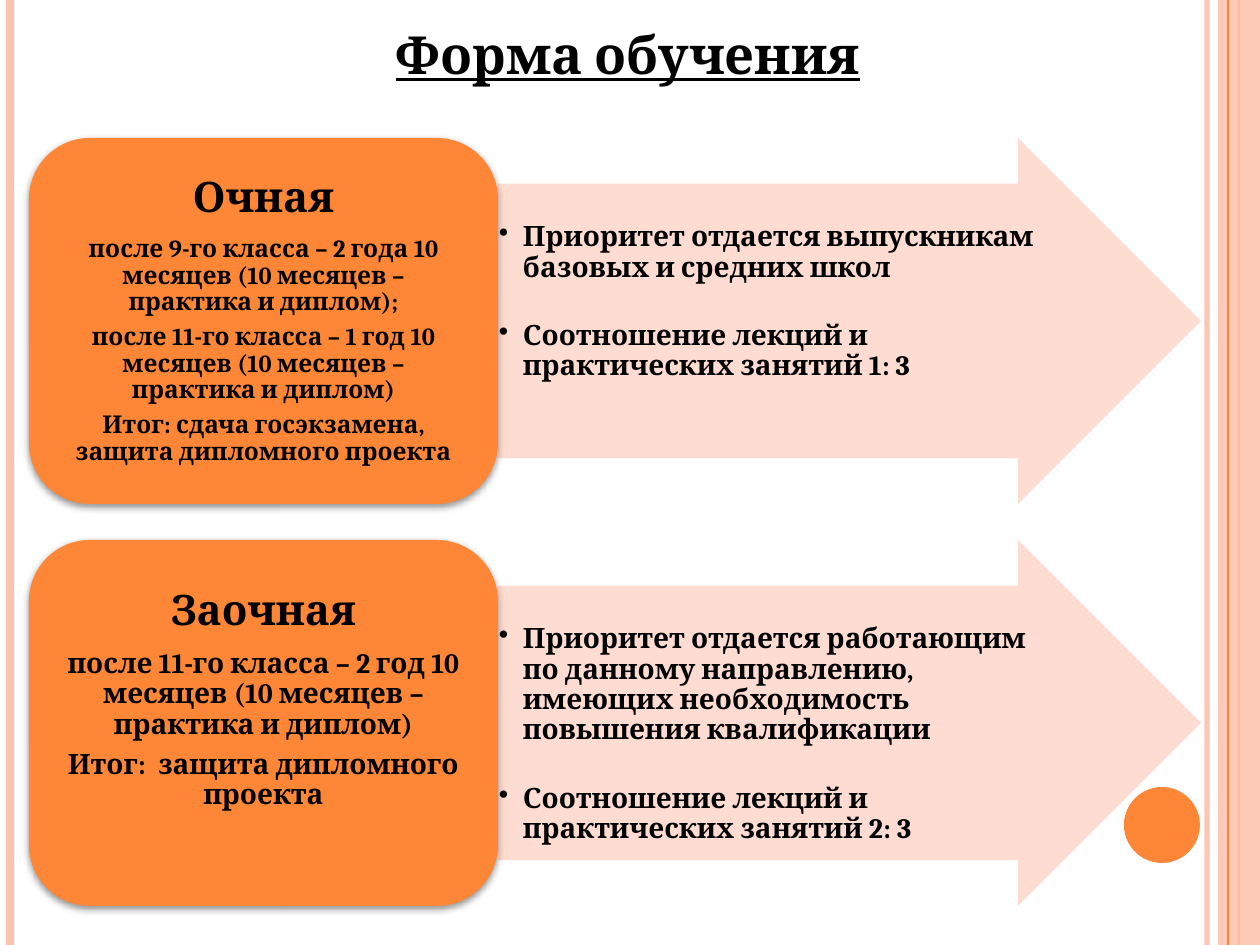
from dataclasses import dataclass

from lxml import etree
from pptx import Presentation
from pptx.dml.color import RGBColor
from pptx.enum.shapes import MSO_CONNECTOR, MSO_SHAPE
from pptx.enum.text import MSO_ANCHOR, PP_ALIGN
from pptx.oxml.ns import qn
from pptx.util import Emu, Pt

LINE = MSO_CONNECTOR.STRAIGHT
RECT, OVAL = MSO_SHAPE.RECTANGLE, MSO_SHAPE.OVAL
ROUND, ARROW = MSO_SHAPE.ROUNDED_RECTANGLE, MSO_SHAPE.RIGHT_ARROW
TOP, MIDDLE, BOTTOM = MSO_ANCHOR.TOP, MSO_ANCHOR.MIDDLE, MSO_ANCHOR.BOTTOM
LEFT, CENTER = PP_ALIGN.LEFT, PP_ALIGN.CENTER

FONT = "Cambria"
COLORS = {"orange": "FE8637", "peach": "FEC3AE", "pale": "FFD9CE", "black": "000000"}
WIDE, HIGH = 1260, 945
CARD_X, CARD_W = 29, 469
ARROW_X, ARROW_W = CARD_X + CARD_W, 703
ROW_Y, ROW_H, STEP = 138, 366, 402
INDENT = 24


@dataclass
class Stripe:
    x: int
    width: float
    color: str
    alpha: int = 100


@dataclass
class Form:
    name: str
    size: int
    terms: list[str]
    points: list[str]
    lift: int = 0


UNDER = [Stripe(1207, 3, "peach", 93), Stripe(10, 4.5, "peach"), Stripe(1239, 1.5, "orange")]
OVER = Stripe(1228, 0.75, "orange")
FORMS = [
    Form(
        "Очная", 14,
        ["после 9-го класса – 2 года 10 месяцев (10 месяцев – практика и диплом);",
         "после 11-го класса – 1 год 10 месяцев (10 месяцев – практика и диплом)",
         "Итог: сдача госэкзамена, защита дипломного проекта"],
        ["Приоритет отдается выпускникам базовых и средних школ",
         "Соотношение лекций и практических занятий 1: 3"],
    ),
    Form(
        "Заочная", 16,
        ["после 11-го класса – 2 год 10 месяцев (10 месяцев – практика и диплом)",
         "Итог:  защита дипломного проекта"],
        ["Приоритет отдается работающим по данному направлению, "
         "имеющих необходимость повышения квалификации",
         "Соотношение лекций и практических занятий 2: 3"],
        lift=46,
    ),
]


def px(n: int) -> Emu:
    return Emu(round(n * 914400 / 126))


def rgb(name: str) -> RGBColor:
    return RGBColor.from_string(COLORS[name])


def fade(shape, alpha: int) -> None:
    """Set the opacity, in percent, of the shape's first colour."""
    color = shape.element.spPr.find(".//" + qn("a:srgbClr"))
    etree.SubElement(color, qn("a:alpha"), val=str(alpha * 1000))


def draw_line(slide, stripe: Stripe) -> None:
    line = slide.shapes.add_connector(LINE, px(stripe.x), 0, px(stripe.x), px(HIGH))
    line.line.color.rgb = rgb(stripe.color)
    line.line.width = Pt(stripe.width)
    etree.SubElement(line.element.spPr, qn("a:effectLst"))
    if stripe.alpha < 100:
        fade(line, stripe.alpha)


def draw_shape(slide, kind, box: tuple[int, int, int, int], color: str, alpha: int = 100):
    shape = slide.shapes.add_shape(kind, *map(px, box))
    shape.fill.solid()
    shape.fill.fore_color.rgb = rgb(color)
    shape.line.fill.background()
    shape.shadow.inherit = False
    if alpha < 100:
        fade(shape, alpha)
    return shape


def add_shadow(shape) -> None:
    effects = shape.element.spPr.find(qn("a:effectLst"))
    outer = etree.SubElement(effects, qn("a:outerShdw"), blurRad="50800", dist="20000",
                             dir="5400000", rotWithShape="0")
    color = etree.SubElement(outer, qn("a:srgbClr"), val=COLORS["black"])
    etree.SubElement(color, qn("a:alpha"), val="42000")


def set_frame(shape, anchor, left: int, top: int, right: int, bottom: int):
    frame = shape.text_frame
    frame.word_wrap = True
    frame.vertical_anchor = anchor
    frame.margin_left, frame.margin_top = px(left), px(top)
    frame.margin_right, frame.margin_bottom = px(right), px(bottom)
    return frame


def style(para, size: int, align, after: float = 0) -> None:
    para.alignment = align
    para.line_spacing = 0.9
    para.space_before = Pt(0)
    para.space_after = Pt(round(after, 1))
    for run in para.runs:
        font = run.font
        font.name, font.size, font.bold = FONT, Pt(size), True
        font.color.rgb = rgb("black")


def add_bullet(para) -> None:
    props = para._p.get_or_add_pPr()
    props.set("marL", str(px(INDENT)))
    props.set("indent", str(-px(INDENT)))
    etree.SubElement(props, qn("a:buFontTx"))
    etree.SubElement(props, qn("a:buChar"), char="•")


def draw_arrow(slide, form: Form, y: int) -> None:
    arrow = draw_shape(slide, ARROW, (ARROW_X, y, ARROW_W, ROW_H), "pale", 90)
    arrow.adjustments[0], arrow.adjustments[1] = 0.75, 0.5
    frame = set_frame(arrow, TOP, 1, 39, 1, 1)
    frame.text = "\n".join(form.points)
    for para in frame.paragraphs:
        style(para, 16, LEFT, 22)
        add_bullet(para)


def draw_card(slide, form: Form, y: int) -> None:
    card = draw_shape(slide, ROUND, (CARD_X, y, CARD_W, ROW_H), "orange")
    add_shadow(card)
    frame = set_frame(card, MIDDLE, 13, 6, 13, 6 + form.lift)
    frame.text = "\n".join([form.name, *form.terms])
    for i, para in enumerate(frame.paragraphs):
        size = form.size if i else 24
        style(para, size, CENTER, 0.35 * size)


def set_title(slide, text: str) -> None:
    title = slide.shapes.title
    title.left, title.top, title.width, title.height = map(px, (59, 0, 1138, 91))
    frame = set_frame(title, BOTTOM, 13, 6, 13, 6)
    frame.text = text
    para = frame.paragraphs[0]
    style(para, 30, CENTER)
    para.line_spacing = 1.0
    para.runs[0].font.underline = True


def main() -> None:
    deck = Presentation()
    deck.slide_width, deck.slide_height = px(WIDE), px(HIGH)
    slide = deck.slides.add_slide(deck.slide_layouts[5])
    for stripe in UNDER:
        draw_line(slide, stripe)
    draw_shape(slide, RECT, (1218, 0, WIDE - 1218, HIGH), "peach", 87)
    draw_line(slide, OVER)
    draw_shape(slide, OVAL, (1124, 787, 76, 76), "orange")
    set_title(slide, "Форма обучения")
    for i, form in enumerate(FORMS):
        y = ROW_Y + i * STEP
        draw_arrow(slide, form, y)
        draw_card(slide, form, y)
    deck.save("out.pptx")


if __name__ == "__main__":
    main()
